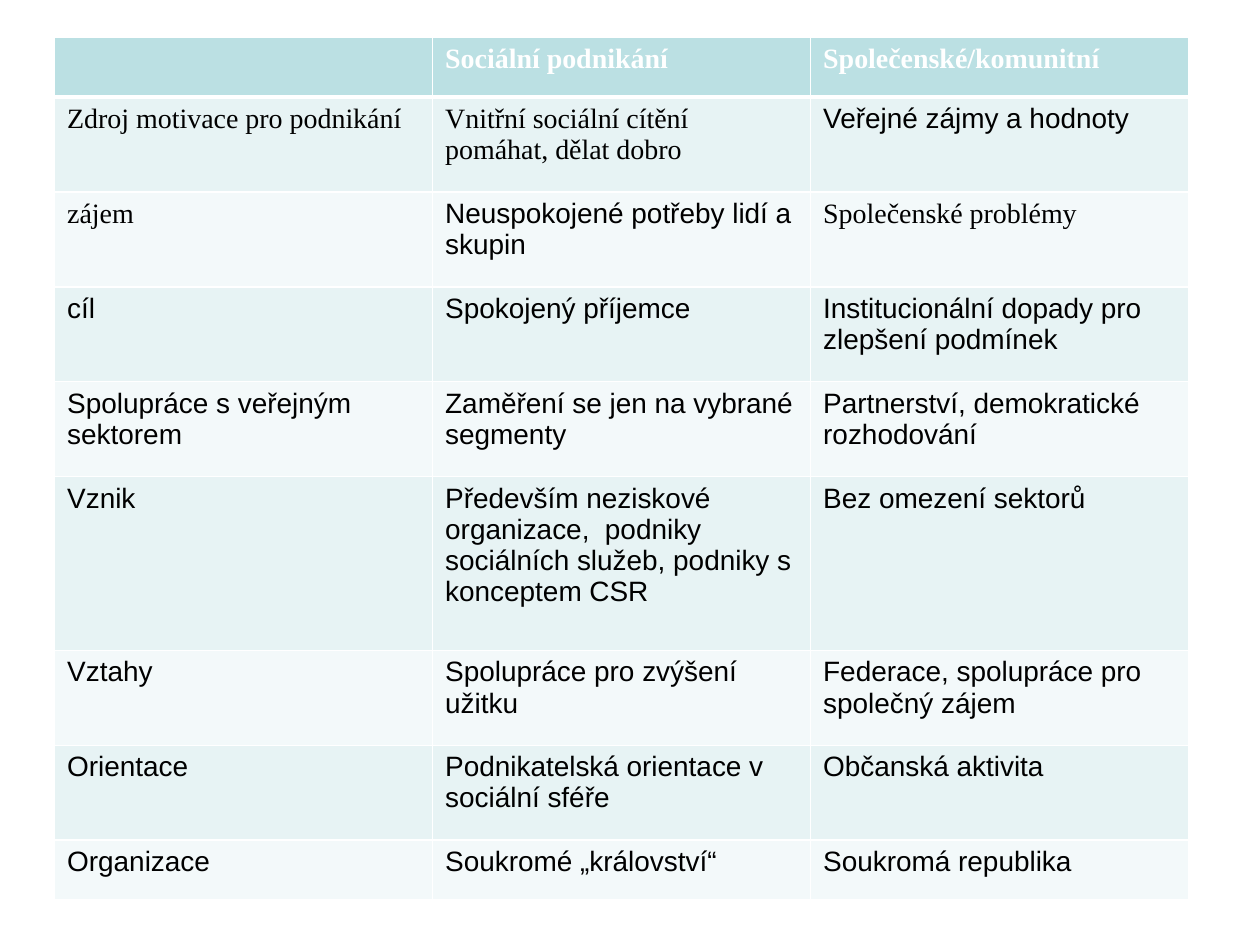
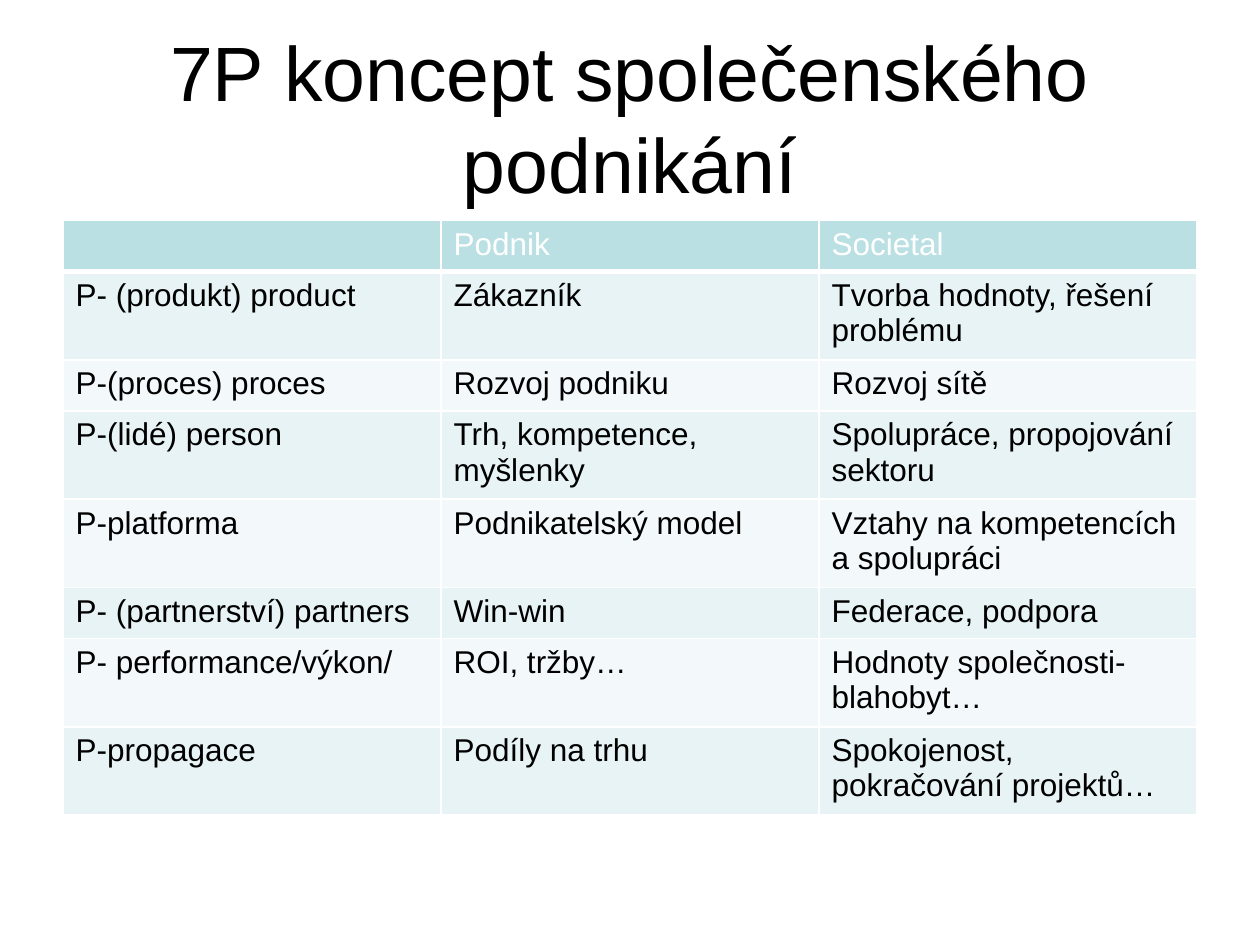
from lxml import etree
from pptx import Presentation
from pptx.dml.color import RGBColor
from pptx.enum.text import MSO_ANCHOR, PP_ALIGN
from pptx.oxml.ns import qn
from pptx.util import Pt

HEADER, BAND_DARK, BAND_LIGHT = "BBE0E3", "E7F3F4", "F3F9FA"
WHITE, BLACK = "FFFFFF", "000000"
SANS, SERIF = "Arial", "Times New Roman"


def rgb(value):
    return RGBColor.from_string(value)


class Deck:
    """Holds the shared style and the current slide."""

    def __init__(self):
        self.prs = Presentation()
        self.prs.slide_width, self.prs.slide_height = Pt(720), Pt(540)
        self.s = None

    def slide(self):
        self.s = self.prs.slides.add_slide(self.prs.slide_layouts[6])

    def style(self, p, size, font, color, bold=False):
        for r in p.runs:
            r.font.size, r.font.name, r.font.bold = Pt(size), font, bold
            r.font.color.rgb = rgb(color)

    def title(self, text):
        sp = self.s.shapes.add_textbox(Pt(36), Pt(21.6), Pt(648), Pt(90))
        tf = sp.text_frame
        tf.word_wrap = True
        tf.vertical_anchor = MSO_ANCHOR.MIDDLE
        tf.text = text
        p = tf.paragraphs[0]
        p.alignment = PP_ALIGN.CENTER
        self.style(p, 44, SANS, BLACK)

    def borders(self, cell, bottom):
        tcPr = cell._tc.get_or_add_tcPr()
        for side, width in (("L", 1), ("R", 1), ("T", 1), ("B", bottom)):
            ln = etree.SubElement(tcPr, qn(f"a:ln{side}"), w=str(Pt(width)))
            fill = etree.SubElement(ln, qn("a:solidFill"))
            etree.SubElement(fill, qn("a:srgbClr"), val=WHITE)

    def table(self, left, top, rows, heights, size, serif=(), bold_header=False):
        """Draw a banded table; serif lists the (row, column) cells set in serif."""
        cols = len(rows[0])
        frame = self.s.shapes.add_table(len(rows), cols, Pt(left), Pt(top),
                                        Pt(216 * cols), Pt(sum(heights)))
        tbl = frame.table
        tbl.first_row = tbl.horz_banding = False
        for i, (row, height) in enumerate(zip(rows, heights)):
            tbl.rows[i].height = Pt(height)
            header = i == 0
            band = HEADER if header else BAND_DARK if i % 2 else BAND_LIGHT
            for j, text in enumerate(row):
                cell = tbl.cell(i, j)
                self.borders(cell, 3 if header else 1)
                cell.fill.solid()
                cell.fill.fore_color.rgb = rgb(band)
                cell.text_frame.text = text
                self.style(cell.text_frame.paragraphs[0], size,
                           SERIF if (i, j) in serif else SANS,
                           WHITE if header else BLACK, header and bold_header)


COMPARISON = [
    ("", "Sociální podnikání", "Společenské/komunitní"),
    ("Zdroj motivace pro podnikání", "Vnitřní sociální cítění pomáhat, dělat dobro",
     "Veřejné zájmy a hodnoty"),
    ("zájem", "Neuspokojené potřeby lidí a skupin", "Společenské problémy"),
    ("cíl", "Spokojený příjemce", "Institucionální dopady pro zlepšení podmínek"),
    ("Spolupráce s veřejným sektorem", "Zaměření se jen na vybrané segmenty",
     "Partnerství, demokratické rozhodování"),
    ("Vznik",
     "Především neziskové organizace,  podniky sociálních služeb, podniky s konceptem CSR",
     "Bez omezení sektorů"),
    ("Vztahy", "Spolupráce pro zvýšení užitku", "Federace, spolupráce pro společný zájem"),
    ("Orientace", "Podnikatelská orientace v sociální sféře", "Občanská aktivita"),
    ("Organizace", "Soukromé „království“", "Soukromá republika"),
]

SEVEN_P = [
    ("", "Podnik", "Societal"),
    ("P- (produkt) product", "Zákazník", "Tvorba hodnoty, řešení problému"),
    ("P-(proces) proces", "Rozvoj podniku", "Rozvoj sítě"),
    ("P-(lidé) person", "Trh, kompetence, myšlenky", "Spolupráce, propojování sektoru"),
    ("P-platforma", "Podnikatelský model", "Vztahy na kompetencích a spolupráci"),
    ("P- (partnerství) partners", "Win-win", "Federace, podpora"),
    ("P- performance/výkon/", "ROI, tržby…", "Hodnoty společnosti-blahobyt…"),
    ("P-propagace", "Podíly na trhu", "Spokojenost, pokračování projektů…"),
]


def main():
    deck = Deck()

    # Social and community enterprise compared
    deck.slide()
    single, double, tall = 34.3, 54.2, 99.4
    heights = [single] + [double] * 4 + [tall] + [double] * 2 + [single]
    deck.table(31.2, 21.2, COMPARISON, heights, 16, bold_header=True,
               serif={(0, 1), (0, 2), (1, 0), (1, 1), (2, 0), (2, 2)})

    # The 7P concept; rows grow with their text
    deck.slide()
    deck.title("7P koncept společenského podnikání")
    deck.table(36, 126, SEVEN_P, [29.2] * len(SEVEN_P), 18)

    deck.prs.save("out.pptx")


if __name__ == "__main__":
    main()
